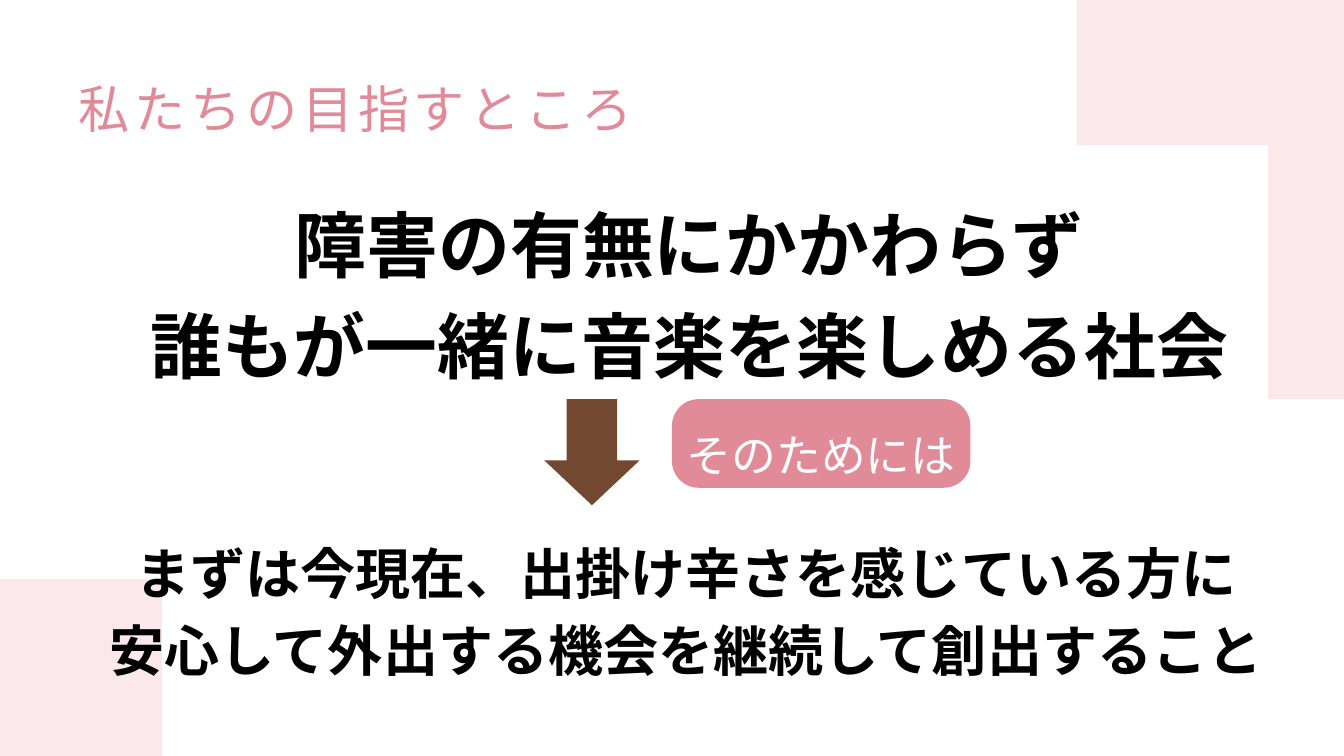
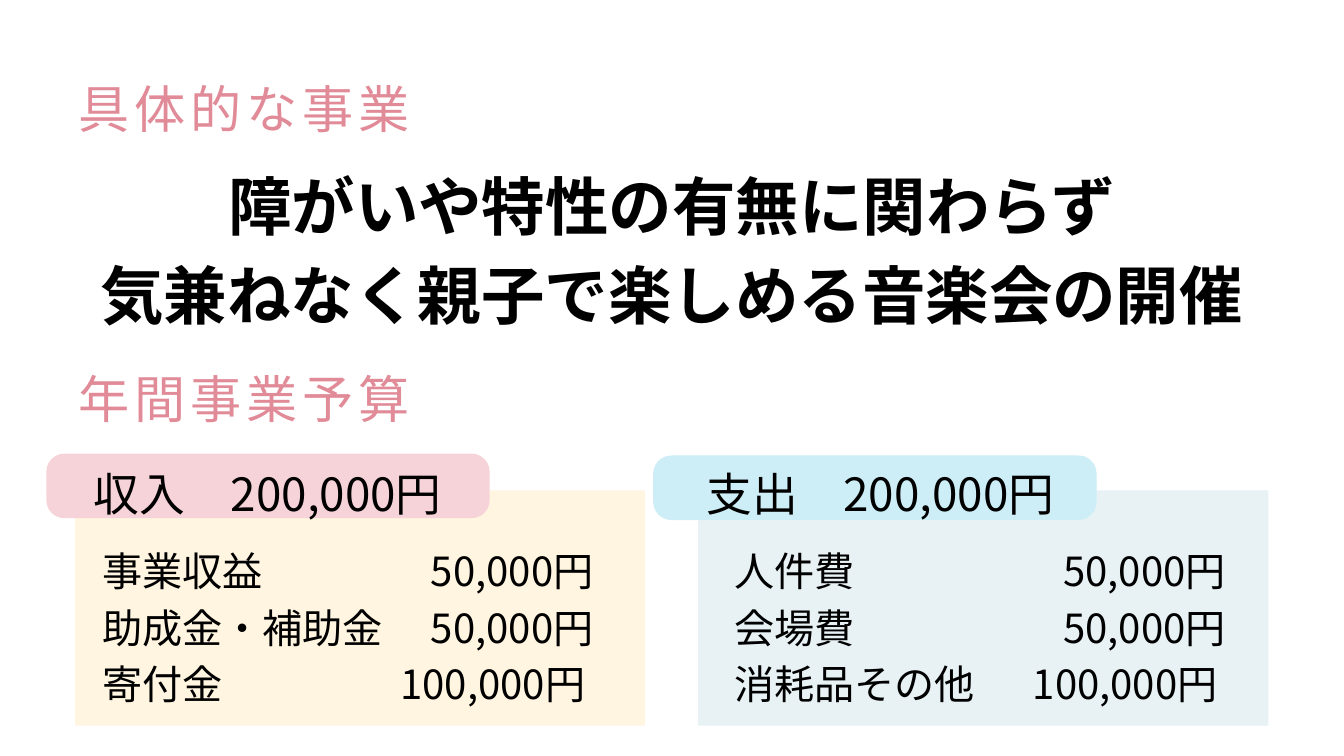
from lxml.etree import SubElement
from pptx import Presentation
from pptx.dml.color import RGBColor
from pptx.enum.shapes import MSO_SHAPE
from pptx.enum.text import MSO_ANCHOR, MSO_AUTO_SIZE, PP_ALIGN
from pptx.oxml.ns import qn
from pptx.util import Cm, Pt

THEME = {
    "font": "Noto Sans CJK JP",
    "line_ratio": 1.4,
    "colors": {
        "rose": "E28B98",
        "blush": "F6D3D8",
        "brown": "734830",
        "cream": "FFF5E0",
        "mist": "E8F2F5",
        "sky": "CDEEF7",
        "white": "FFFFFF",
        "black": "000000",
    },
    "text": {
        "heading": {"size": 54.8, "color": "rose", "spacing": 510},
        "vision": {"size": 77, "bold": True, "align": PP_ALIGN.CENTER},
        "project": {"size": 68, "bold": True, "align": PP_ALIGN.CENTER},
        "step": {"size": 59, "bold": True, "align": PP_ALIGN.CENTER},
        "bridge": {"size": 48, "color": "white"},
        "total": {"size": 49, "align": PP_ALIGN.CENTER},
        "item": {"size": 43, "tabs": (12.43, 12.43, 11.28)},
    },
}
FRAME = {
    "margin_left": 0,
    "margin_top": 0,
    "margin_right": 0,
    "margin_bottom": 0,
    "word_wrap": True,
    "vertical_anchor": MSO_ANCHOR.TOP,
    "auto_size": MSO_AUTO_SIZE.SHAPE_TO_FIT_TEXT,
}


def add_block(slide, preset, box, color, adjustments=(), alpha=None):
    block = slide.shapes.add_shape(preset, *map(Cm, box))
    block.shadow.inherit = False
    block.line.fill.background()
    block.fill.solid()
    block.fill.fore_color.rgb = RGBColor.from_string(THEME["colors"][color])
    for position, value in enumerate(adjustments):
        block.adjustments[position] = value
    if alpha:
        tint = block.fill._xPr.find(".//" + qn("a:srgbClr"))
        SubElement(tint, qn("a:alpha"), val=str(alpha * 1000))


def write(slide, box, lines, style_name, holder=None):
    style = THEME["text"][style_name]
    holder = holder or slide.shapes.add_textbox(0, 0, 0, 0)
    for side, length in zip(("left", "top", "width", "height"), box):
        setattr(holder, side, Cm(length))
    frame = holder.text_frame
    for name, value in FRAME.items():
        setattr(frame, name, value)
    paragraph_format = {
        "alignment": style.get("align", PP_ALIGN.LEFT),
        "line_spacing": Pt(round(style["size"] * THEME["line_ratio"], 1)),
        "space_before": Pt(0),
    }
    font_format = {
        "name": THEME["font"],
        "size": Pt(style["size"]),
        "bold": style.get("bold", False),
    }
    color = RGBColor.from_string(THEME["colors"][style.get("color", "black")])
    frame.text = "\n".join(lines)
    for paragraph in frame.paragraphs:
        for name, value in paragraph_format.items():
            setattr(paragraph, name, value)
        for run in paragraph.runs:
            for name, value in font_format.items():
                setattr(run.font, name, value)
            run.font.color.rgb = color
            properties = run._r.get_or_add_rPr()
            properties.set("lang", "ja-JP")
            SubElement(properties, qn("a:ea"), typeface=THEME["font"])
            if "spacing" in style:
                properties.set("spc", str(style["spacing"]))
    for paragraph, stop in zip(frame.paragraphs, style.get("tabs", ())):
        tabs = SubElement(paragraph._p.get_or_add_pPr(), qn("a:tabLst"))
        SubElement(tabs, qn("a:tab"), pos=str(Cm(stop)), algn="l")


deck = Presentation()
deck.slide_width, deck.slide_height = Cm(50.8), Cm(28.58)
title_only = deck.slide_layouts[5]
heading_left, heading_width, heading_height = 2.97, 28.8, 2.39
title_box = (heading_left, 2.54, heading_width, heading_height)

goal = deck.slides.add_slide(title_only)
write(goal, title_box, ["私たちの目指すところ"], "heading", goal.shapes.title)
for corner in ((0, 21.89, 6.12, 6.69), (40.7, 0, 10.1, 15.09)):
    add_block(goal, MSO_SHAPE.RECTANGLE, corner, "blush", alpha=52)
add_block(goal, MSO_SHAPE.RECTANGLE, (32.23, 5.49, 15.7, 11.61), "white")
add_block(goal, MSO_SHAPE.DOWN_ARROW, (20.57, 15.09, 3.61, 4.01), "brown", (0.53, 0.47))
add_block(goal, MSO_SHAPE.ROUNDED_RECTANGLE, (25.4, 15.09, 11.28, 3.35), "rose", (0.3,))
write(
    goal,
    (4.19, 7.04, 43.74, 7.44),
    ["障害の有無にかかわらず", "誰もが一緒に音楽を楽しめる社会"],
    "vision",
)
write(goal, (25.96, 15.82, 24.84, 2.08), ["そのためには"], "bridge")
write(
    goal,
    (1.52, 19.96, 48.84, 5.74),
    ["まずは今現在、出掛け辛さを感じている方に", "安心して外出する機会を継続して創出すること"],
    "step",
)

plan = deck.slides.add_slide(title_only)
write(plan, title_box, ["具体的な事業"], "heading", plan.shapes.title)
write(
    plan,
    (3.53, 5.84, 43.74, 6.32),
    ["障がいや特性の有無に関わらず", "気兼ねなく親子で楽しめる音楽会の開催"],
    "project",
)
write(plan, (heading_left, 13.51, heading_width, heading_height), ["年間事業予算"], "heading")

budget = [
    {
        "total": "収入　200,000円",
        "total_box": (0, 17.25, 20.24, 2.13),
        "label_at": (1.75, 17.15),
        "label_color": "blush",
        "panel_left": 2.84,
        "panel_color": "cream",
        "items_left": 3.86,
        "items": [("事業収益", "50,000円"), ("助成金・補助金", "50,000円"), ("寄付金", "100,000円")],
    },
    {
        "total": "支出　200,000円",
        "total_box": (23.47, 17.25, 19.61, 2.13),
        "label_at": (24.69, 17.22),
        "label_color": "sky",
        "panel_left": 26.39,
        "panel_color": "mist",
        "items_left": 27.76,
        "items": [("人件費", "50,000円"), ("会場費", "50,000円"), ("消耗品その他", "100,000円")],
    },
]
for side in budget:
    panel = (side["panel_left"], 18.54, 21.55, 8.89)
    add_block(plan, MSO_SHAPE.RECTANGLE, panel, side["panel_color"])
    label = (*side["label_at"], 16.76, 2.44)
    add_block(plan, MSO_SHAPE.ROUNDED_RECTANGLE, label, side["label_color"], (0.28,))
    write(plan, side["total_box"], [side["total"]], "total")
    items = ["\t".join(item) for item in side["items"]]
    write(plan, (side["items_left"], 20.37, 21.54, 6.35), items, "item")

deck.save("out.pptx")
